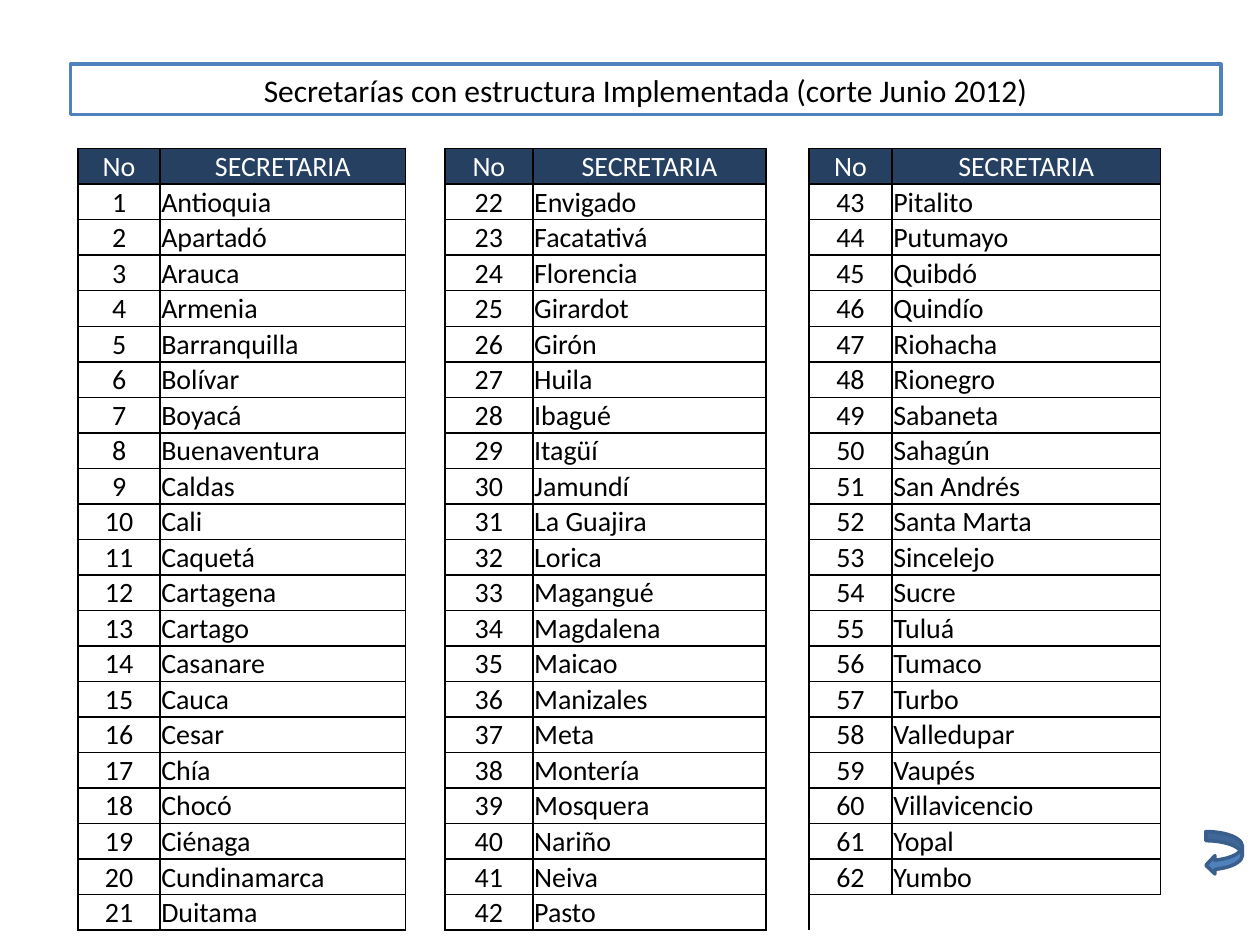
from lxml.etree import SubElement
from pptx import Presentation
from pptx.dml.color import RGBColor
from pptx.enum.shapes import MSO_SHAPE
from pptx.enum.text import MSO_ANCHOR, MSO_AUTO_SIZE, PP_ALIGN
from pptx.oxml.ns import qn
from pptx.util import Inches, Pt

WHITE = RGBColor(0xFF, 0xFF, 0xFF)
BLACK = RGBColor(0x00, 0x00, 0x00)
NAVY = RGBColor(0x25, 0x40, 0x61)
BLUE = RGBColor(0x4F, 0x81, 0xBD)
DARK_BLUE = RGBColor(0x3A, 0x5F, 0x8C)
FONT = "Calibri"
PLAIN_TABLE_STYLE = "{2D5ABB26-0587-4C30-8999-92F81FD0307C}"

TITLE = "Secretarías con estructura Implementada (corte Junio 2012)"
HEADINGS = ("No", "SECRETARIA")
SECRETARIAS = (
    "Antioquia", "Apartadó", "Arauca", "Armenia", "Barranquilla", "Bolívar", "Boyacá",
    "Buenaventura", "Caldas", "Cali", "Caquetá", "Cartagena", "Cartago", "Casanare",
    "Cauca", "Cesar", "Chía", "Chocó", "Ciénaga", "Cundinamarca", "Duitama",
    "Envigado", "Facatativá", "Florencia", "Girardot", "Girón", "Huila", "Ibagué",
    "Itagüí", "Jamundí", "La Guajira", "Lorica", "Magangué", "Magdalena", "Maicao",
    "Manizales", "Meta", "Montería", "Mosquera", "Nariño", "Neiva", "Pasto",
    "Pitalito", "Putumayo", "Quibdó", "Quindío", "Riohacha", "Rionegro", "Sabaneta",
    "Sahagún", "San Andrés", "Santa Marta", "Sincelejo", "Sucre", "Tuluá", "Tumaco",
    "Turbo", "Valledupar", "Vaupés", "Villavicencio", "Yopal", "Yumbo",
)
NAMES_PER_BLOCK = 21
COLUMNS_PER_BLOCK = 3  # number, name, gap
COLUMN_WIDTHS = (0.65, 1.95, 0.31, 0.7, 1.85, 0.34, 0.66, 2.13)
HEADER_HEIGHT = 0.28


def inches(box):
    return [Inches(length) for length in box]


def style_text(para, size, color, alignment):
    para.alignment = alignment
    for span in para.runs:
        span.font.name = FONT
        span.font.size = Pt(size)
        span.font.color.rgb = color


def add_title(page, box):
    title = page.shapes.title
    title.left, title.top, title.width, title.height = inches(box)
    title.fill.solid()
    title.fill.fore_color.rgb = WHITE
    title.line.color.rgb = BLUE
    title.line.width = Pt(2)
    frame = title.text_frame
    frame.text = TITLE
    frame.word_wrap = True
    frame.auto_size = MSO_AUTO_SIZE.NONE
    frame.vertical_anchor = MSO_ANCHOR.MIDDLE
    style_text(frame.paragraphs[0], 18, BLACK, PP_ALIGN.CENTER)


def add_borders(cell, sides):
    properties = cell._tc.get_or_add_tcPr()
    for side in sides:
        line = SubElement(properties, qn(f"a:ln{side}"), w=str(Pt(1)))
        fill = SubElement(line, qn("a:solidFill"))
        SubElement(fill, qn("a:srgbClr"), val=str(BLACK))


def fill_cell(cell, text, color, alignment):
    cell.text = text
    cell.vertical_anchor = MSO_ANCHOR.MIDDLE
    add_borders(cell, "LRTB")
    style_text(cell.text_frame.paragraphs[0], 16, color, alignment)


def clear_cell(cell, sides):
    """Leave a cell empty, with a small text size so that its row keeps its height."""
    add_borders(cell, sides)
    SubElement(cell.text_frame.paragraphs[0]._p, qn("a:endParaRPr"), sz="1000")
    cell.fill.background()


def add_secretaria_table(page, box):
    left, top, width, height = box
    frame = page.shapes.add_table(
        NAMES_PER_BLOCK + 1, len(COLUMN_WIDTHS), *inches(box))
    table = frame.table
    table._tbl.tblPr.find(qn("a:tableStyleId")).text = PLAIN_TABLE_STYLE
    table.horz_banding = False
    for column, column_width in zip(table.columns, COLUMN_WIDTHS):
        column.width = Inches(column_width)
    for row in table.rows:
        row.height = Inches((height - HEADER_HEIGHT) / NAMES_PER_BLOCK)
    table.rows[0].height = Inches(HEADER_HEIGHT)

    for row_index in range(NAMES_PER_BLOCK + 1):
        for column_index in range(len(COLUMN_WIDTHS)):
            cell = table.cell(row_index, column_index)
            cell.margin_left = cell.margin_right = cell.margin_top = Inches(0.01)
            cell.margin_bottom = 0
            block, part = divmod(column_index, COLUMNS_PER_BLOCK)
            number = block * NAMES_PER_BLOCK + row_index
            if part == 2:
                last_gap = block == 1 and row_index == NAMES_PER_BLOCK
                clear_cell(cell, "L" if last_gap else "LR")
            elif row_index == 0:
                fill_cell(cell, HEADINGS[part], WHITE, PP_ALIGN.CENTER)
                cell.fill.solid()
                cell.fill.fore_color.rgb = NAVY
            elif number > len(SECRETARIAS):
                clear_cell(cell, "T")
            else:
                text = (str(number), SECRETARIAS[number - 1])[part]
                alignment = (PP_ALIGN.CENTER, PP_ALIGN.LEFT)[part]
                fill_cell(cell, text, BLACK, alignment)
                cell.fill.background()


def add_return_arrow(page, box):
    arrow = page.shapes.add_shape(MSO_SHAPE.CURVED_LEFT_ARROW, *inches(box))
    arrow.shadow.inherit = False
    arrow.fill.solid()
    arrow.fill.fore_color.rgb = BLUE
    arrow.line.color.rgb = DARK_BLUE
    arrow.line.width = Pt(2)


def main():
    deck = Presentation()
    deck.slide_width, deck.slide_height = Inches(10), Inches(7.5)
    page = deck.slides.add_slide(deck.slide_layouts[5])
    add_title(page, (0.56, 0.51, 9.13, 0.4))
    add_return_arrow(page, (9.57, 6.6, 0.29, 0.34))
    add_secretaria_table(page, (0.62, 1.18, sum(COLUMN_WIDTHS), 6.03))
    deck.save("out.pptx")


if __name__ == "__main__":
    main()
